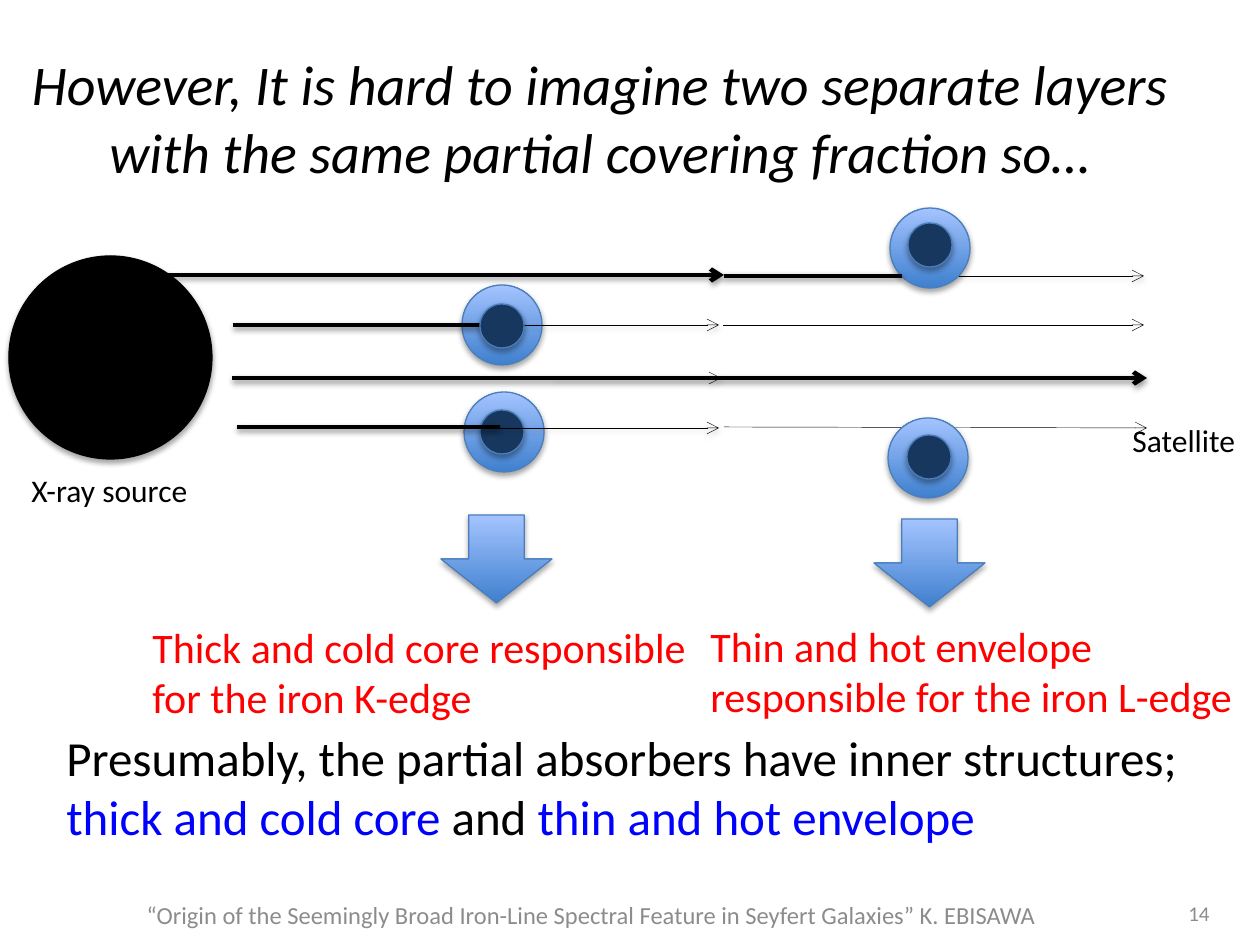
from dataclasses import dataclass

from lxml import etree
from pptx import Presentation
from pptx import util as u
from pptx.dml.color import RGBColor
from pptx.enum import shapes, text
from pptx.oxml.ns import qn

PX = 914400 / 126  # EMU per px
WIDTH, HEIGHT = 1260, 945


@dataclass(frozen=True)
class Theme:
    font: str = "Calibri"
    black: str = "000000"
    gray: str = "8C8C8C"
    red: str = "FF0000"
    blue: str = "0000FF"
    core: str = "17375E"
    outline: str = "4B7EBC"
    envelope: tuple = ("3F80CE", "A4C4FF")
    title: int = 32
    conclusion: int = 28
    note: int = 24
    label: int = 18
    footer: int = 14
    number: int = 12
    thick: float = 2.5
    thin: float = 0.25
    border: float = 0.75


THEME = Theme()


def px(*lengths):
    return [u.Emu(round(length * PX)) for length in lengths]


def color(value):
    return RGBColor.from_string(value)


def write(paragraph, content, size, fill=THEME.black, italic=False):
    run = paragraph.add_run()
    run.text = content
    run.font.name = THEME.font
    run.font.size = u.Pt(size)
    run.font.italic = italic
    run.font.color.rgb = color(fill)


def set_shadow(properties, distance, opacity, visible=True):
    for old in properties.findall(qn("a:effectLst")):
        properties.remove(old)
    effects = etree.SubElement(properties, qn("a:effectLst"))
    if visible:
        shadow = etree.SubElement(effects, qn("a:outerShdw"), blurRad="40000",
                                  dist=str(distance), dir="5400000", rotWithShape="0")
        black = etree.SubElement(shadow, qn("a:srgbClr"), val=THEME.black)
        etree.SubElement(black, qn("a:alpha"), val=str(opacity * 1000))


class SlideBuilder:
    def __init__(self, slide, theme):
        self.slide = slide
        self.theme = theme

    def text_box(self, left, top, width, height, wrap=True,
                 align=text.PP_ALIGN.LEFT, anchor=text.MSO_ANCHOR.TOP):
        """Add an empty text box and return its first paragraph."""
        frame = self.slide.shapes.add_textbox(*px(left, top, width, height)).text_frame
        frame.word_wrap = wrap
        frame.vertical_anchor = anchor
        paragraph = frame.paragraphs[0]
        paragraph.alignment = align
        return paragraph

    def shape(self, kind, left, top, width, height, fill=None, outline=None):
        """Add a preset shape; without a fill it takes the envelope gradient."""
        shape = self.slide.shapes.add_shape(kind, *px(left, top, width, height))
        if fill:
            shape.fill.solid()
            shape.fill.fore_color.rgb = color(fill)
        else:
            shape.fill.gradient()
            shape.fill.gradient_angle = 90
            for stop, value in zip(shape.fill.gradient_stops, self.theme.envelope):
                stop.color.rgb = color(value)
        shape.line.color.rgb = color(outline or self.theme.outline)
        shape.line.width = u.Pt(self.theme.border)
        shape.shadow.inherit = False
        set_shadow(shape._element.spPr, 23000, 35)

    def circle(self, left, top, diameter, fill=None, outline=None):
        self.shape(shapes.MSO_SHAPE.OVAL, left, top, diameter, diameter, fill, outline)

    def ray(self, start, end, weight, arrow=True, shadow=True):
        line = self.slide.shapes.add_connector(
            shapes.MSO_CONNECTOR.STRAIGHT, *px(*start, *end))
        line.line.color.rgb = color(self.theme.black)
        line.line.width = u.Pt(weight)
        properties = line._element.spPr
        if arrow:
            etree.SubElement(properties.find(qn("a:ln")), qn("a:tailEnd"), type="arrow")
        set_shadow(properties, 20000, 38, shadow)


def main():
    presentation = Presentation()
    presentation.slide_width, presentation.slide_height = px(WIDTH, HEIGHT)
    slide = presentation.slides.add_slide(presentation.slide_layouts[6])
    builder = SlideBuilder(slide, THEME)
    center, right = text.PP_ALIGN.CENTER, text.PP_ALIGN.RIGHT
    middle = text.MSO_ANCHOR.MIDDLE
    thick, thin = THEME.thick, THEME.thin
    envelope, core = 80, 44

    # Title
    write(builder.text_box(-21, 38, 1243, 158, align=center, anchor=middle),
          "However, It is hard to imagine two separate layers with the same "
          "partial covering fraction so…", THEME.title, italic=True)

    # Footer and slide number
    write(builder.text_box(122, 890, 939, 50, align=center, anchor=middle),
          "“Origin of the Seemingly Broad Iron-Line Spectral Feature in Seyfert "
          "Galaxies” K. EBISAWA", THEME.footer, THEME.gray)
    write(builder.text_box(929, 888, 293, 50, align=right, anchor=middle),
          "14", THEME.number, THEME.gray)

    # X-ray source and left envelopes
    for left, top in ((462, 285), (464, 392)):
        builder.circle(left, top, envelope)
    builder.circle(9, 256, 203, THEME.black, THEME.black)

    # Rays passing behind the absorbers
    builder.ray((233, 325), (496, 325), thick, arrow=False)
    builder.ray((486, 325), (719, 325), thin)
    builder.ray((724, 427), (1147, 428), thin, shadow=False)

    # Right envelopes and all cores
    for left, top in ((890, 208), (888, 418)):
        builder.circle(left, top, envelope)
    for left, top in ((480, 304), (480, 410), (908, 223), (907, 435)):
        builder.circle(left, top, core, THEME.core)

    # Rays in front
    builder.ray((723, 325), (1144, 325), thin, shadow=False)
    builder.ray((959, 276), (1144, 276), thin)
    builder.ray((232, 378), (1147, 378), thick)
    builder.ray((724, 276), (902, 276), thick, arrow=False)
    builder.ray((237, 427), (500, 427), thick, arrow=False)
    builder.ray((159, 275), (724, 275), thick)
    builder.ray((553, 378), (721, 378), thin)
    builder.ray((483, 428), (719, 428), thin)

    # Labels at both ends of the rays
    write(builder.text_box(19, 465, 186, 50, wrap=False), "X-ray source", THEME.label)
    write(builder.text_box(1120, 415, 130, 50, wrap=False), "Satellite", THEME.label)

    # Down arrows with their explanations
    for arrow, box, note in (
        ((441, 515), (140, 615, 581, 115),
         "Thick and cold core responsible for the iron K-edge"),
        ((874, 519), (698, 614, 587, 115),
         "Thin and hot envelope responsible for the iron L-edge"),
    ):
        builder.shape(shapes.MSO_SHAPE.DOWN_ARROW, *arrow, 111, 88)
        write(builder.text_box(*box), note, THEME.note, THEME.red)

    # Conclusion
    conclusion = builder.text_box(54, 721, 1211, 131)
    write(conclusion, "Presumably, the partial absorbers have inner structures;",
          THEME.conclusion)
    conclusion.add_line_break()
    for content, fill in (("thick and cold core ", THEME.blue), ("and ", THEME.black),
                          ("thin and hot envelope", THEME.blue)):
        write(conclusion, content, THEME.conclusion, fill)

    presentation.save("out.pptx")


if __name__ == "__main__":
    main()
